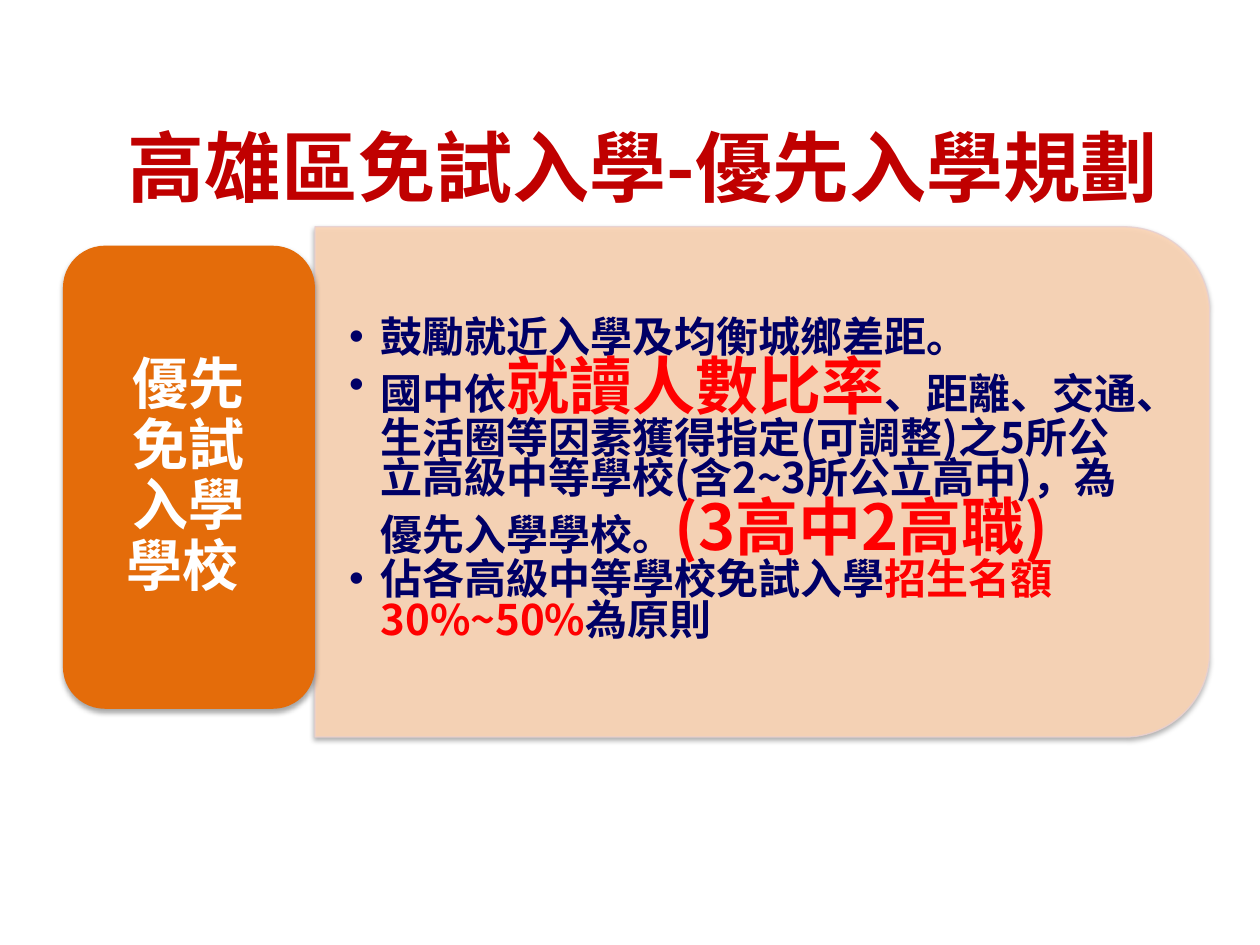
import pptx
import pptx.dml.color
import pptx.enum.shapes
import pptx.enum.text
import pptx.oxml
import pptx.oxml.ns
import pptx.util
from lxml import etree

FONT = "Noto Sans CJK SC"
COLORS = {
    "title": "C00000",
    "panel": "FCD5B5",
    "panel_line": "E8D0D0",
    "tab": "E46C0A",
    "body": "000066",
    "accent": "FF0000",
    "label": "FFFFFF",
    "shadow": "000000",
}
ALIGN = pptx.enum.text.PP_ALIGN
SHAPES = pptx.enum.shapes.MSO_SHAPE

TITLE = "高雄區免試入學-優先入學規劃"
LABEL_LINES = ["優先", "免試", "入學", "學校 "]
POINTS = [
    [("鼓勵就近入學及均衡城鄉差距。", 24, "body")],
    [
        ("國中依", 24, "body"),
        ("就讀人數比率", 36, "accent"),
        ("、距離、交通、生活圈等因素獲得指定(可調整)之5所公立高級中等學校"
         "(含2~3所公立高中)，為優先入學學校。", 24, "body"),
        ("(3高中2高職)", 36, "accent"),
    ],
    [
        ("佔各高級中等學校免試入學", 24, "body"),
        ("招生名額30%~50%", 24, "accent"),
        ("為原則", 24, "body"),
    ],
]


def color(name):
    return pptx.dml.color.RGBColor.from_string(COLORS[name])


def add_element(parent, tag, **attributes):
    element = etree.SubElement(parent, pptx.oxml.ns.qn(tag))
    for key, value in attributes.items():
        element.set(key, str(value))
    return element


def share_box(presentation, left, top, width, height):
    return (
        round(presentation.slide_width * left),
        round(presentation.slide_height * top),
        round(presentation.slide_width * width),
        round(presentation.slide_height * height),
    )


def place(shape, box):
    shape.left, shape.top, shape.width, shape.height = box


def set_margins(frame, horizontal, vertical):
    frame.margin_left = frame.margin_right = pptx.util.Inches(horizontal)
    frame.margin_top = frame.margin_bottom = pptx.util.Inches(vertical)
    frame.vertical_anchor = pptx.enum.text.MSO_ANCHOR.MIDDLE
    frame.auto_size = pptx.enum.text.MSO_AUTO_SIZE.NONE
    frame.word_wrap = True


def style_font(font, size=None, color_name=None):
    font.name = FONT
    font.bold = True
    if size:
        font.size = pptx.util.Pt(size)
    if color_name:
        font.color.rgb = color(color_name)


def set_alpha(fill, percent):
    choice = fill._xPr.find(pptx.oxml.ns.qn("a:solidFill"))
    add_element(choice[0], "a:alpha", val=percent * 1000)


def add_shadow(shape):
    shape.shadow.inherit = False
    effects = shape._element.spPr.find(pptx.oxml.ns.qn("a:effectLst"))
    shadow = add_element(
        effects, "a:outerShdw", blurRad=pptx.util.Pt(3.1), dist=pptx.util.Pt(1.8),
        dir=90 * 60000, rotWithShape=0)
    tint = add_element(shadow, "a:srgbClr", val=COLORS["shadow"])
    add_element(tint, "a:alpha", val=35000)


def add_block(slide, kind, box, color_name):
    shape = slide.shapes.add_shape(kind, *box)
    shape.fill.solid()
    shape.fill.fore_color.rgb = color(color_name)
    shape.line.fill.background()
    add_shadow(shape)
    return shape


def fill_title(slide, box):
    title = slide.shapes.title
    place(title, box)
    frame = title.text_frame
    set_margins(frame, 0.1, 0.05)
    frame.text = TITLE
    paragraph = frame.paragraphs[0]
    paragraph.alignment = ALIGN.CENTER
    style_font(paragraph.font, 44, "title")


def build_panel(slide, box):
    left, top, width, height = box
    turned = (left + (width - height) // 2, top + (height - width) // 2, height, width)
    panel = add_block(slide, SHAPES.ROUND_2_SAME_RECTANGLE, turned, "panel")
    panel.rotation = 90
    set_alpha(panel.fill, 90)
    panel.line.color.rgb = color("panel_line")
    panel.line.width = pptx.util.Pt(0.75)
    set_alpha(panel.line.fill, 90)

    body = slide.placeholders[1]
    slide.shapes._spTree.append(body._element)
    place(body, (left, top + round(height * 0.05), round(width * 0.97), round(height * 0.9)))
    frame = body.text_frame
    set_margins(frame, 0.27, 0.14)
    for index, point in enumerate(POINTS):
        paragraph = frame.add_paragraph() if index else frame.paragraphs[0]
        paragraph.level = 1
        paragraph.line_spacing = 0.8
        paragraph.space_before = paragraph.space_after = pptx.util.Pt(0)
        properties = paragraph._p.get_or_add_pPr()
        properties.set("marL", str(pptx.util.Inches(0.25)))
        properties.set("indent", str(-pptx.util.Inches(0.25)))
        add_element(properties, "a:buChar", char="•")
        style_font(paragraph.font)
        for text, size, color_name in point:
            run = paragraph.add_run()
            run.text = text
            run.font.size = pptx.util.Pt(size)
            run.font.color.rgb = color(color_name)


def build_tab(slide, box):
    left, top, width, height = box
    add_block(slide, SHAPES.ROUNDED_RECTANGLE, box, "tab")
    inset = round(width * 0.05)
    label = slide.shapes.add_textbox(
        left + inset, top + inset, width - 2 * inset, height - 2 * inset)
    frame = label.text_frame
    set_margins(frame, 0.13, 0.07)
    for index, line in enumerate(LABEL_LINES):
        paragraph = frame.add_paragraph() if index else frame.paragraphs[0]
        paragraph.text = line
        paragraph.alignment = ALIGN.CENTER
        paragraph.line_spacing = 0.9
        style_font(paragraph.font, 32, "label")


def main():
    presentation = pptx.Presentation()
    presentation.slide_width = pptx.util.Inches(10)
    presentation.slide_height = pptx.util.Inches(7.5)
    slide = presentation.slides.add_slide(presentation.slide_layouts[1])
    fill_title(slide, share_box(presentation, 0.06, 0.09, 0.9, 0.17))
    build_panel(slide, share_box(presentation, 0.25, 0.24, 0.71, 0.54))
    build_tab(slide, share_box(presentation, 0.05, 0.26, 0.2, 0.49))
    presentation.save("out.pptx")


if __name__ == "__main__":
    main()
